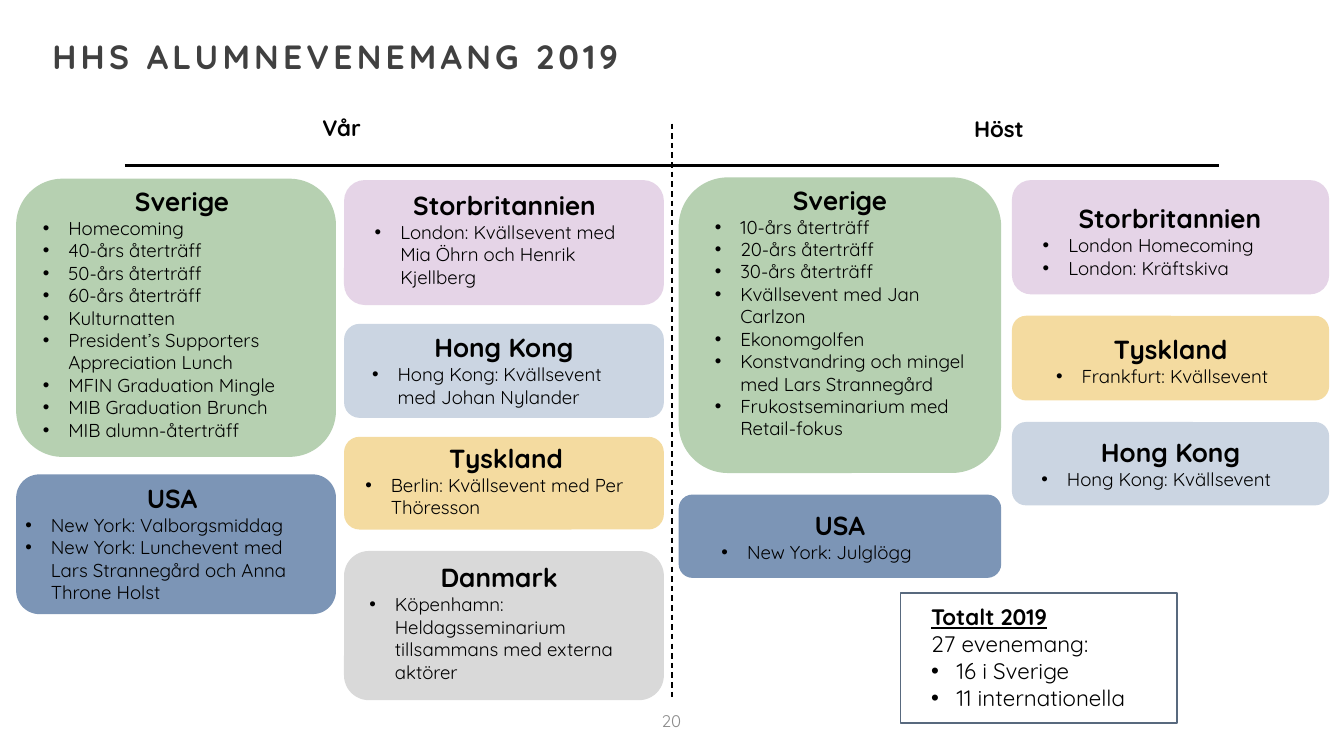
"""Builds the overview slide of the alumni events held in spring and autumn 2019."""
from lxml import etree
from pptx import Presentation
from pptx import util as u
from pptx.dml.color import RGBColor
from pptx.enum import dml, shapes, text
from pptx.oxml.ns import qn

WIDTH = 10
HEIGHT = WIDTH * 9 / 16
FONT = "Quicksand"
COLORS = {
    "Sverige": "B6D0B1", "Storbritannien": "E5D4E7", "Hong Kong": "CBD5E2",
    "Tyskland": "F4DBA0", "USA": "7C95B6", "Danmark": "D9D9D9",
    "black": "000000", "title": "404040", "number": "8C8C8C",
    "white": "FFFFFF", "border": "58697E",
}
COLUMNS = [(0.12, 2.38), (2.56, 2.38), (5.05, 2.4), (7.53, 2.36)]
INDENT = 0.19

CARDS = [
    [
        ("Sverige", 1.33, 2.07, (0.1, 0, 2.27, 2.2), [
            "Homecoming", "40-års återträff", "50-års återträff", "60-års återträff",
            "Kulturnatten", "President’s Supporters Appreciation Lunch",
            "MFIN Graduation Mingle", "MIB Graduation Brunch", "MIB alumn-återträff"]),
        ("USA", 3.53, 1.04, (-0.03, 0.01, 2.38, 1.01), [
            "New York: Valborgsmiddag",
            "New York: Lunchevent med Lars Strannegård och Anna Throne Holst"]),
    ],
    [
        ("Storbritannien", 1.34, 0.93, (0.13, 0.02, 2.13, 0.84), [
            "London: Kvällsevent med Mia Öhrn och Henrik Kjellberg"]),
        ("Hong Kong", 2.41, 0.7, (0.11, 0.01, 2.16, 0.67), [
            "Hong Kong: Kvällsevent med Johan Nylander"]),
        ("Tyskland", 3.25, 0.69, (0.06, -0.01, 2.29, 0.67), [
            "Berlin: Kvällsevent med Per Thöresson"]),
        ("Danmark", 4.1, 1.11, (0.09, 0.03, 2.13, 1.01), [
            "Köpenhamn: Heldagsseminarium tillsammans med externa aktörer"]),
    ],
    [
        ("Sverige", 1.32, 2.2, (0.17, 0, 2.06, 2.19), [
            "10-års återträff", "20-års återträff", "30-års återträff",
            "Kvällsevent med Jan Carlzon", "Ekonomgolfen",
            "Konstvandring och mingel med Lars Strannegård",
            "Frukostseminarium med Retail-fokus"]),
        ("USA", 3.68, 0.62, (0.22, 0.06, 1.96, 0.5), ["New York: Julglögg"]),
    ],
    [
        ("Storbritannien", 1.34, 0.85, (0.13, 0.12, 2.09, 0.67), [
            "London Homecoming", "London: Kräftskiva"]),
        ("Tyskland", 2.35, 0.63, (0.23, 0.08, 1.9, 0.5), ["Frankfurt: Kvällsevent"]),
        ("Hong Kong", 3.14, 0.62, (0.12, 0.06, 2.12, 0.5), ["Hong Kong: Kvällsevent"]),
    ],
]
SEASONS = [("Vår", 2.3, 0.8, 0.53), ("Höst", 7.15, 0.81, 0.6)]
TOTAL_HEADING, TOTAL_INTRO = "Totalt 2019", "27 evenemang:"
TOTAL_ITEMS = ["16 i Sverige", "11 internationella"]


def color(name):
    return RGBColor.from_string(COLORS[name])


def add_box(slide, left, top, width, height, inset=True):
    box = slide.shapes.add_textbox(*map(u.Inches, (left, top, width, height)))
    frame = box.text_frame
    frame.word_wrap = True
    if inset:
        frame.auto_size = text.MSO_AUTO_SIZE.SHAPE_TO_FIT_TEXT
    else:
        frame.margin_left = frame.margin_top = frame.margin_right = frame.margin_bottom = 0
    return frame


def add_line(frame, words, size, bold=False, ink="black", centred=False, bullet=False):
    first = frame.paragraphs[0]
    paragraph = frame.add_paragraph() if first.runs else first
    if centred:
        paragraph.alignment = text.PP_ALIGN.CENTER
    if bullet:
        properties = paragraph._p.get_or_add_pPr()
        properties.set("marL", str(u.Inches(INDENT)))
        properties.set("indent", str(-u.Inches(INDENT)))
        etree.SubElement(properties, qn("a:buFont"), typeface="Arial")
        etree.SubElement(properties, qn("a:buChar"), char="•")
    run = paragraph.add_run()
    run.text = words
    run.font.name, run.font.size, run.font.bold = FONT, u.Pt(size), bold
    run.font.color.rgb = color(ink)
    return paragraph, run


def add_panel(slide, kind, left, top, width, height, fill, border=None):
    panel = slide.shapes.add_shape(kind, *map(u.Inches, (left, top, width, height)))
    panel.shadow.inherit = False
    panel.fill.solid()
    panel.fill.fore_color.rgb = color(fill)
    if border:
        panel.line.color.rgb = color(border)
        panel.line.width = u.Pt(1)
    else:
        panel.line.fill.background()


def add_rule(slide, start, end, weight, dash=None):
    rule = slide.shapes.add_connector(
        shapes.MSO_CONNECTOR.STRAIGHT, *map(u.Inches, (*start, *end)))
    rule.line.color.rgb = color("black")
    rule.line.width = u.Pt(weight)
    if dash:
        rule.line.dash_style = dash
    etree.SubElement(rule._element.spPr, qn("a:effectLst"))


def add_card(slide, column, card):
    country, top, height, (dx, dy, box_width, box_height), events = card
    left, width = column
    add_panel(slide, shapes.MSO_SHAPE.ROUNDED_RECTANGLE, left, top, width, height, country)
    frame = add_box(slide, left + dx, top + dy, box_width, box_height)
    add_line(frame, country, 14, bold=True, centred=True)
    for event in events:
        add_line(frame, event, 10, bullet=True)


def add_total(slide):
    add_panel(slide, shapes.MSO_SHAPE.RECTANGLE, 6.7, 4.41, 2.06, 0.97, "white", "border")
    frame = add_box(slide, 6.83, 4.44, 2.18, 0.91)
    heading = add_line(frame, TOTAL_HEADING, 12, bold=True)[1]
    heading.font.underline = True
    add_line(frame, TOTAL_INTRO, 12)
    for item in TOTAL_ITEMS:
        add_line(frame, item, 12, bullet=True)


def main():
    presentation = Presentation()
    presentation.slide_width, presentation.slide_height = u.Inches(WIDTH), u.Inches(HEIGHT)
    slide = presentation.slides.add_slide(presentation.slide_layouts[6])

    title = add_box(slide, 0.39, 0.3, 9.22, 0.58, inset=False)
    paragraph, run = add_line(title, "HHS ALUMNEVENEMANG 2019", 18, bold=True, ink="title")
    paragraph.line_spacing = 0.9
    run.font._element.set("spc", "225")

    number = add_box(slide, 4.7, 5.21, 0.59, 0.3, inset=False)
    number.vertical_anchor = text.MSO_ANCHOR.MIDDLE
    add_line(number, "20", 9, ink="number", centred=True)

    for season, left, top, width in SEASONS:
        add_line(add_box(slide, left, top, width, 0.3), season, 12, bold=True)
    add_rule(slide, (0.93, 1.23), (WIDTH - 0.93, 1.23), 1.5)
    add_rule(slide, (WIDTH / 2, 0.92), (WIDTH / 2, 5.21), 0.75, dml.MSO_LINE.DASH)

    for column, cards in zip(COLUMNS, CARDS):
        for card in cards:
            add_card(slide, column, card)
    add_total(slide)
    presentation.save("out.pptx")


if __name__ == "__main__":
    main()
